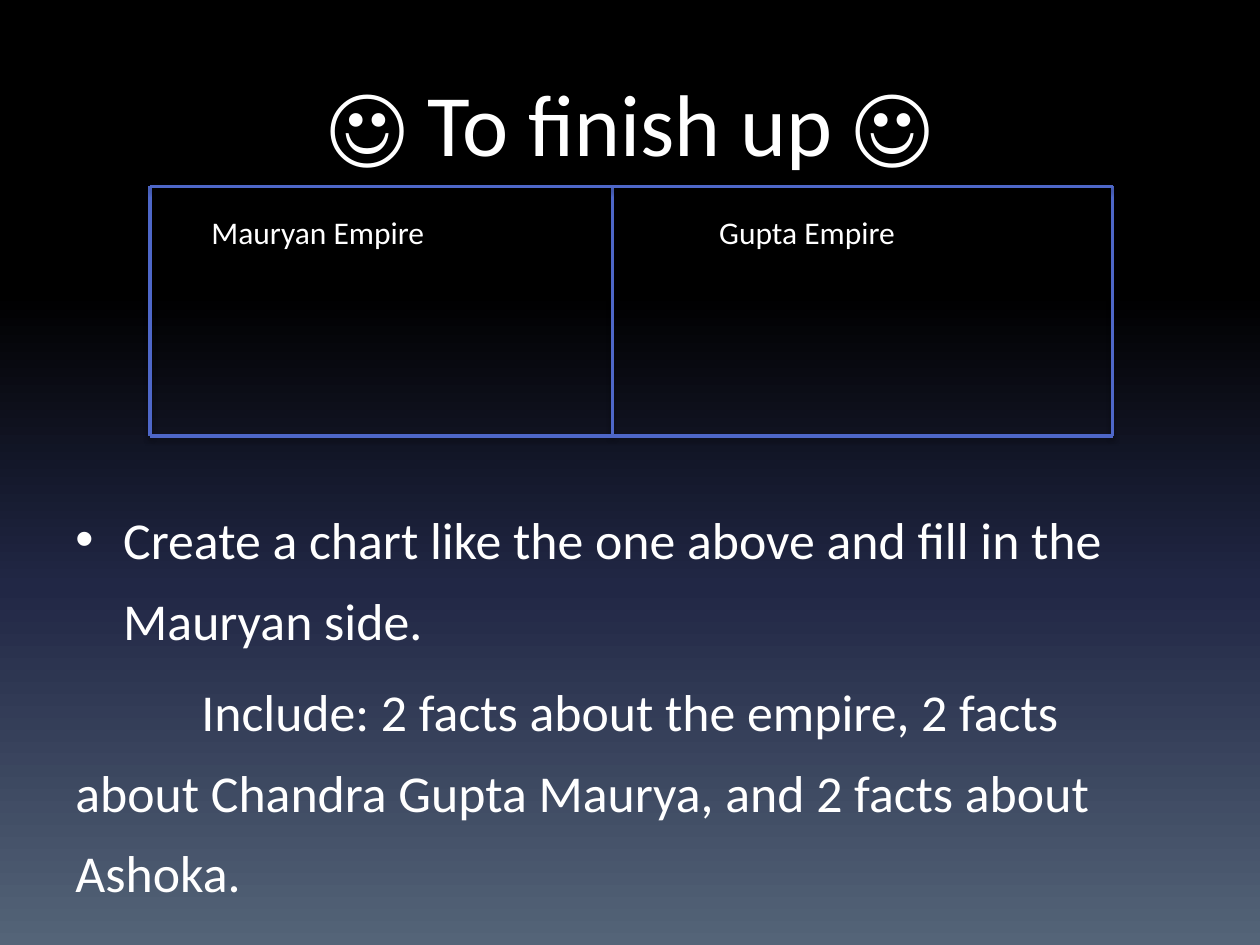
from lxml import etree
from pptx import Presentation
from pptx.dml.color import RGBColor
from pptx.enum.shapes import MSO_CONNECTOR
from pptx.enum.text import MSO_ANCHOR, PP_ALIGN
from pptx.oxml.ns import qn
from pptx.util import Inches, Pt

STRAIGHT = MSO_CONNECTOR.STRAIGHT
TOP, MIDDLE = MSO_ANCHOR.TOP, MSO_ANCHOR.MIDDLE
LEFT, CENTER = PP_ALIGN.LEFT, PP_ALIGN.CENTER

TITLE = "☺ To finish up ☺"
EMPIRES = [("Mauryan Empire", 1.58, 3.11), ("Gupta Empire", 5.61, 2.54)]
TASKS = [
    ("Create a chart like the one above and fill in the Mauryan side.", True),
    ("Include: 2 facts about the empire, 2 facts about Chandra Gupta Maurya, "
     "and 2 facts about Ashoka.", False),
]

THEME = {
    "font": "Calibri", "text": "FFFFFF", "line": "4E67C8", "shadow": "000000",
    "title": 50, "body": 29.6, "label": 18, "line_width": 2,
    "background": [(0, "000000"), (31, "000000"), (62, "212745"), (100, "546478")],
}

WIDTH, HEIGHT = 10, 7.5
MARGIN = WIDTH * 0.05
CONTENT = WIDTH - 2 * MARGIN
COLUMNS = [1.19, 4.86, 8.83]
ROWS = [1.48, 3.46]
LABEL_TOP = ROWS[0] + 0.16


def child(parent, tag, **attrs):
    return etree.SubElement(parent, qn(tag), {k: str(v) for k, v in attrs.items()})


def paint_background(slide):
    fill = slide.background.fill
    fill.gradient()
    fill.gradient_angle = 270
    stops = slide.element.xpath(".//a:gsLst")[0]
    for stop in list(stops):
        stops.remove(stop)
    for pos, color in THEME["background"]:
        stop = child(stops, "a:gs", pos=pos * 1000)
        child(stop, "a:srgbClr", val=color)


def add_box(slide, left, top, width, height, anchor=TOP):
    box = slide.shapes.add_textbox(*map(Inches, (left, top, width, height)))
    tf = box.text_frame
    tf.word_wrap = True
    tf.vertical_anchor = anchor
    return tf


def add_text(p, text, size, align=LEFT):
    p.alignment = align
    r = p.add_run()
    r.text = text
    r.font.name = THEME["font"]
    r.font.size = Pt(THEME[size])
    r.font.color.rgb = RGBColor.from_string(THEME["text"])


def add_tasks(tf):
    for i, (text, bulleted) in enumerate(TASKS):
        p = tf.paragraphs[0] if i == 0 else tf.add_paragraph()
        p.line_spacing = 1.3
        p.space_before = Pt(6)
        add_text(p, text, "body")
        pPr = p._p.get_or_add_pPr()
        margin, indent = (0.38, -0.38) if bulleted else (0, 1)
        pPr.set("marL", str(Inches(margin)))
        pPr.set("indent", str(Inches(indent)))
        if bulleted:
            child(pPr, "a:buFont", typeface="Arial")
            child(pPr, "a:buChar", char="•")
        else:
            child(pPr, "a:buNone")


def add_rule(slide, x1, y1, x2, y2):
    rule = slide.shapes.add_connector(STRAIGHT, *map(Inches, (x1, y1, x2, y2)))
    rule.line.color.rgb = RGBColor.from_string(THEME["line"])
    rule.line.width = Pt(THEME["line_width"])
    effects = child(rule._element.spPr, "a:effectLst")
    shadow = child(effects, "a:outerShdw", blurRad=Pt(3.1), dist=Pt(1.6),
                   dir=90 * 60000, rotWithShape=0)
    color = child(shadow, "a:srgbClr", val=THEME["shadow"])
    child(color, "a:alpha", val=38000)


def main():
    prs = Presentation()
    prs.slide_width, prs.slide_height = Inches(WIDTH), Inches(HEIGHT)
    slide = prs.slides.add_slide(prs.slide_layouts[6])
    paint_background(slide)

    tf = add_box(slide, MARGIN, 0.5, CONTENT, 1.25)
    add_text(tf.paragraphs[0], TITLE, "title", CENTER)
    add_tasks(add_box(slide, MARGIN, 3.79, CONTENT, 3.47, MIDDLE))

    for x in COLUMNS:
        add_rule(slide, x, ROWS[0], x, ROWS[-1])
    for y in ROWS:
        add_rule(slide, COLUMNS[0], y, COLUMNS[-1], y)
    for name, left, width in EMPIRES:
        tf = add_box(slide, left, LABEL_TOP, width, 0.4)
        add_text(tf.paragraphs[0], name, "label")

    prs.save("out.pptx")


if __name__ == "__main__":
    main()
